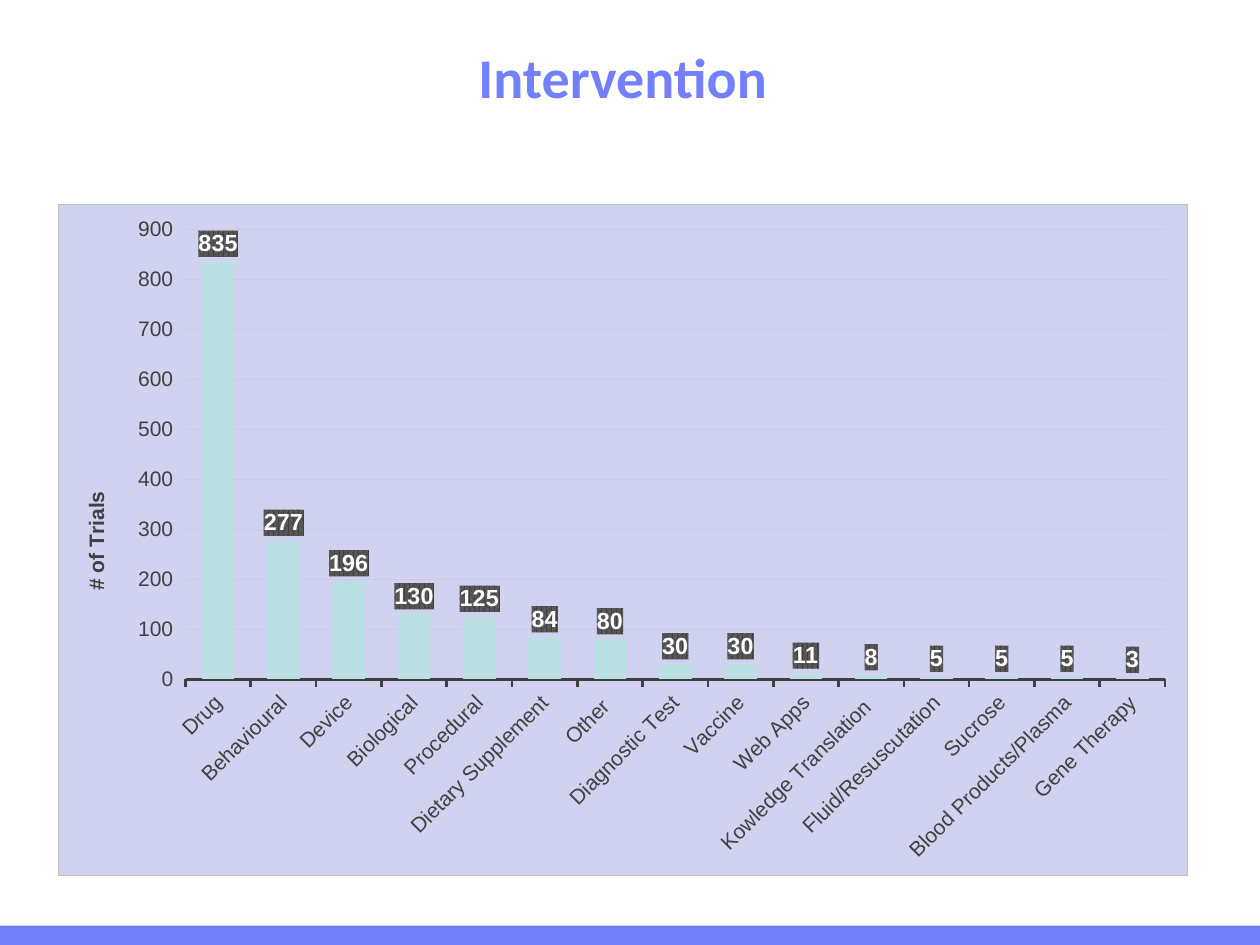
from pptx import Presentation
from pptx.chart.data import CategoryChartData
from pptx.dml.color import RGBColor
from pptx.enum.chart import XL_CHART_TYPE as Kind, XL_LABEL_POSITION as Spot
from pptx.enum.chart import XL_TICK_MARK as Tick
from pptx.enum.shapes import MSO_SHAPE as Shape
from pptx.enum.text import MSO_ANCHOR as Anchor, PP_ALIGN as Align
from pptx.oxml import parse_xml
from pptx.util import Cm, Pt

NS = ('xmlns:c="http://schemas.openxmlformats.org/drawingml/2006/chart" '
      'xmlns:a="http://schemas.openxmlformats.org/drawingml/2006/main"')
WIDE, HIGH = 22.78, 13.56  # chart size in cm
DATA = {
    "Drug": 835, "Behavioural": 277, "Device": 196, "Biological": 130,
    "Procedural": 125, "Dietary Supplement": 84, "Other ": 80,
    "Diagnostic Test": 30, "Vaccine": 30, "Web Apps": 11,
    "Kowledge Translation ": 8, "Fluid/Resuscutation": 5, "Sucrose": 5,
    "Blood Products/Plasma": 5, "Gene Therapy": 3,
}


def rgb(code):
    return RGBColor.from_string(code)


def paint(fill, code):
    fill.solid()
    fill.fore_color.rgb = rgb(code)


def layout(x, y, w=None, h=None):
    """Manual chart layout from cm; with a size it is the inner plot."""
    target = '<c:layoutTarget val="inner"/>' if w else ""
    size = f'<c:w val="{w / WIDE}"/><c:h val="{h / HIGH}"/>' if w else ""
    return parse_xml(
        f'<c:layout {NS}><c:manualLayout>{target}<c:xMode val="edge"/>'
        f'<c:yMode val="edge"/><c:x val="{x / WIDE}"/><c:y val="{y / HIGH}"/>'
        f'{size}</c:manualLayout></c:layout>')


def tint(code):
    return f'<a:srgbClr val="{code}"/>'


def look(inner):
    return parse_xml(f'<c:spPr {NS}>{inner}</c:spPr>')


class Deck:
    accent, ink, bar, panel = "7480FB", "404040", "BBE0E3", "D1D1F0"
    grid, edge, white, fleck = "C9C9E8", "BFBFBF", "FFFFFF", "595959"

    def __init__(self):
        self.prs = Presentation()
        self.prs.slide_width, self.prs.slide_height = Cm(25.4), Cm(19.05)
        self.slide = self.prs.slides.add_slide(self.prs.slide_layouts[6])

    def font(self, font, size, color, bold=False, name="Arial"):
        font.size, font.bold, font.name = Pt(size), bold, name
        font.color.rgb = rgb(color)

    def band(self, x, y, w, h):
        box = self.slide.shapes.add_shape(Shape.RECTANGLE, Cm(x), Cm(y), Cm(w), Cm(h))
        box.shadow.inherit = False
        paint(box.fill, self.accent)
        box.line.fill.background()

    def title(self, text, x, y, w, h):
        frame = self.slide.shapes.add_textbox(Cm(x), Cm(y), Cm(w), Cm(h)).text_frame
        frame.word_wrap = True
        frame.vertical_anchor = Anchor.MIDDLE
        frame.text = text
        para = frame.paragraphs[0]
        para.alignment = Align.CENTER
        self.font(para.runs[0].font, 32, self.accent, True, "Calibri")

    def chart(self, values, label, x, y):
        data = CategoryChartData()
        data.categories = list(values)
        data.add_series("Series 1", list(values.values()))
        chart = self.slide.shapes.add_chart(
            Kind.COLUMN_CLUSTERED, Cm(x), Cm(y), Cm(WIDE), Cm(HIGH), data).chart
        chart.has_legend = chart.has_title = False
        self.font(chart.font, 10, "000000")
        self.bars(chart.plots[0])
        self.axes(chart, label)
        root = chart._chartSpace.chart
        root.addnext(look(
            f'<a:solidFill>{tint(self.panel)}</a:solidFill><a:ln w="{Pt(0.75)}">'
            f'<a:solidFill>{tint(self.edge)}</a:solidFill></a:ln>'))
        area = root.plotArea
        for old in area.findall("{*}layout"):
            area.remove(old)
        area.insert(0, layout(2.56, 0.5, 19.77, 9.09))

    def bars(self, plot):
        plot.gap_width = 100
        plot.vary_by_categories = False
        paint(plot.series[0].format.fill, self.bar)
        plot.has_data_labels = True
        labels = plot.data_labels
        labels.show_value = True
        labels.position = Spot.OUTSIDE_END
        self.font(labels.font, 13.3, self.white, True)
        labels._element.find("{*}txPr").addprevious(look(
            f'<a:pattFill prst="pct75"><a:fgClr>{tint(self.ink)}</a:fgClr>'
            f'<a:bgClr>{tint(self.fleck)}</a:bgClr></a:pattFill>'))

    def axes(self, chart, label):
        cat, val = chart.category_axis, chart.value_axis
        for axis in (cat, val):
            self.font(axis.tick_labels.font, 12, self.ink)
            axis.minor_tick_mark = Tick.NONE
            axis.major_tick_mark = Tick.OUTSIDE
        cat.format.line.width = Pt(1.5)
        cat.format.line.color.rgb = rgb(self.ink)
        body = cat._element.find("{*}txPr/{*}bodyPr")
        body.set("rot", "-2700000")
        body.set("vert", "horz")

        val.minimum_scale, val.maximum_scale, val.major_unit = 0, 900, 100
        val.format.line.fill.background()
        lines = val.major_gridlines.format.line
        lines.width = Pt(0.75)
        lines.color.rgb = rgb(self.grid)

        frame = val.axis_title.text_frame
        frame.text = label
        self.font(frame.paragraphs[0].runs[0].font, 12, self.ink, True)
        head = val.axis_title._element
        body = head.find("{*}tx/{*}rich/{*}bodyPr")
        body.set("rot", "-5400000")
        body.set("vert", "horz")
        for old in head.findall("{*}layout"):
            head.remove(old)
        head.find("{*}tx").addnext(layout(0.42, 5.72))


def main():
    deck = Deck()
    deck.band(0, 18.66, 25.4, 0.39)
    deck.title("Intervention", 4.12, 0.23, 16.87, 2.62)
    deck.chart(DATA, "# of Trials", 1.17, 4.11)
    deck.prs.save("out.pptx")


if __name__ == "__main__":
    main()
